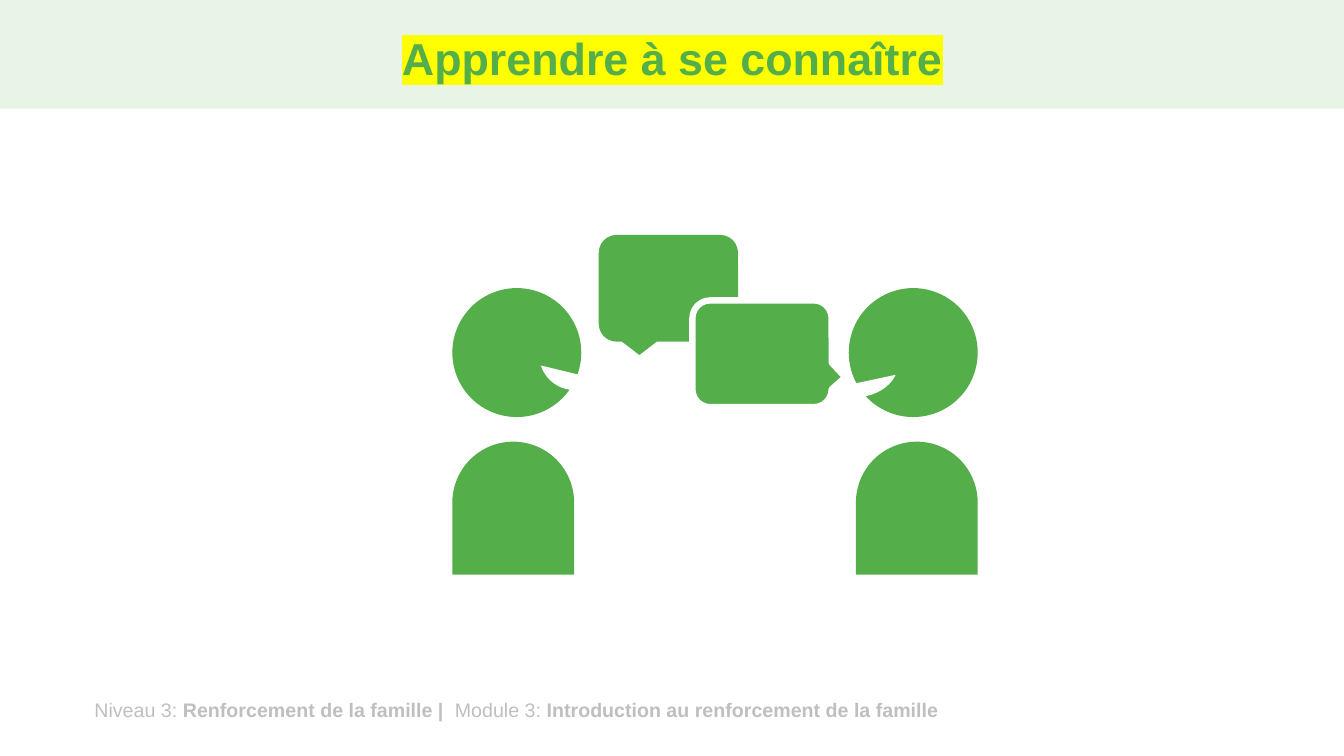
from lxml.etree import SubElement
from pptx import Presentation
from pptx.dml.color import RGBColor
from pptx.enum.shapes import MSO_SHAPE
from pptx.enum.text import MSO_ANCHOR, MSO_AUTO_SIZE, PP_ALIGN
from pptx.oxml.ns import qn
from pptx.util import Cm, Pt

# Content
GREEN, PALE_GREEN, WHITE, GREY, YELLOW = "54AF4B", "E8F4E6", "FFFFFF", "BFBFBF", "FFFF00"
TITLE = [("Apprendre à se connaître", True)]
FOOTER = [
    ("Niveau 3: ", False),
    ("Renforcement de la famille |  ", True),
    ("Module 3: ", False),
    ("Introduction au renforcement de la famille", True),
]

# Measures in centimetres
SLIDE_WIDTH, SLIDE_HEIGHT, BAND_HEIGHT = 33.87, 19.05, 2.74
PEOPLE_LEFT, PEOPLE_RIGHT = 11.4, 24.64
PERSON_PARTS = [  # preset, top, width, height, adjustments
    (MSO_SHAPE.OVAL, 7.26, 3.25, 3.25, ()),
    (MSO_SHAPE.ROUND_2_SAME_RECTANGLE, 11.13, 3.07, 3.35, (0.5, 0)),
]
MOUTHS = [((13.59, 8.05, 1.78, 1.78), False), ((20.47, 8.23, 2.18, 1.78), True)]
MOUTH_ANGLES = (27, 97.343)
BUBBLE_SIZE = (3.51, 2.69)
BUBBLES = [  # left, top, tail adjustments, outline
    (15.09, 5.92, (-0.208, 0.625, 0.167), None),
    (17.45, 7.57, (0.598, 0.219, 0.167), WHITE),
]


def color(hex_value):
    return RGBColor.from_string(hex_value)


def add_part(shapes, preset, box, fill, adjustments=(), outline=None):
    shape = shapes.add_shape(preset, *map(Cm, box))
    shape.shadow.inherit = False
    shape.fill.solid()
    shape.fill.fore_color.rgb = color(fill)
    if outline:
        shape.line.color.rgb = color(outline)
        shape.line.width = Pt(4.5)
    else:
        shape.line.fill.background()
    for index, value in enumerate(adjustments):
        shape.adjustments[index] = value
    return shape


def add_text(shapes, box, runs, size, hex_value, frame_format, paragraph_format, highlight=None):
    frame = shapes.add_textbox(*map(Cm, box)).text_frame
    for name, value in frame_format.items():
        setattr(frame, name, value)
    paragraph = frame.paragraphs[0]
    for name, value in paragraph_format.items():
        setattr(paragraph, name, value)
    for text, bold in runs:
        run = paragraph.add_run()
        run.text = text
        run.font.color.rgb = color(hex_value)
        if highlight:
            properties = run.font._element
            mark = SubElement(properties, qn("a:highlight"))
            SubElement(mark, qn("a:srgbClr"), val=highlight)
        for name, value in {"name": "Arial", "size": Pt(size), "bold": bold}.items():
            setattr(run.font, name, value)


def main():
    presentation = Presentation()
    presentation.slide_width, presentation.slide_height = Cm(SLIDE_WIDTH), Cm(SLIDE_HEIGHT)
    slide = presentation.slides.add_slide(presentation.slide_layouts[6])

    # Header band, footer and title
    add_part(slide.shapes, MSO_SHAPE.RECTANGLE, (0, 0, SLIDE_WIDTH, BAND_HEIGHT), PALE_GREEN)
    add_text(slide.shapes, (2.13, 17.45, 26.97, 0.86), FOOTER, 14, GREY,
             {"word_wrap": True, "auto_size": MSO_AUTO_SIZE.SHAPE_TO_FIT_TEXT}, {})
    add_text(slide.shapes, (2.34, 0.33, 29.21, 2.41), TITLE, 32, GREEN,
             {"word_wrap": True, "vertical_anchor": MSO_ANCHOR.MIDDLE},
             {"alignment": PP_ALIGN.CENTER, "line_spacing": 0.9}, YELLOW)

    # Two people, each aligned to the outer edge of the drawing
    conversation = slide.shapes.add_group_shape().shapes
    for preset, top, width, height, adjustments in PERSON_PARTS:
        for left in (PEOPLE_LEFT, PEOPLE_RIGHT - width):
            add_part(conversation, preset, (left, top, width, height), GREEN, adjustments)

    # Mouths, the right one mirrored
    for box, mirrored in MOUTHS:
        mouth = add_part(conversation, MSO_SHAPE.CHORD, box, WHITE, MOUTH_ANGLES)
        if mirrored:
            mouth._element.spPr.find(qn("a:xfrm")).set("flipH", "1")

    # Speech bubbles
    for left, top, tail, outline in BUBBLES:
        add_part(conversation, MSO_SHAPE.ROUNDED_RECTANGULAR_CALLOUT,
                 (left, top, *BUBBLE_SIZE), GREEN, tail, outline)

    presentation.save("out.pptx")


if __name__ == "__main__":
    main()
